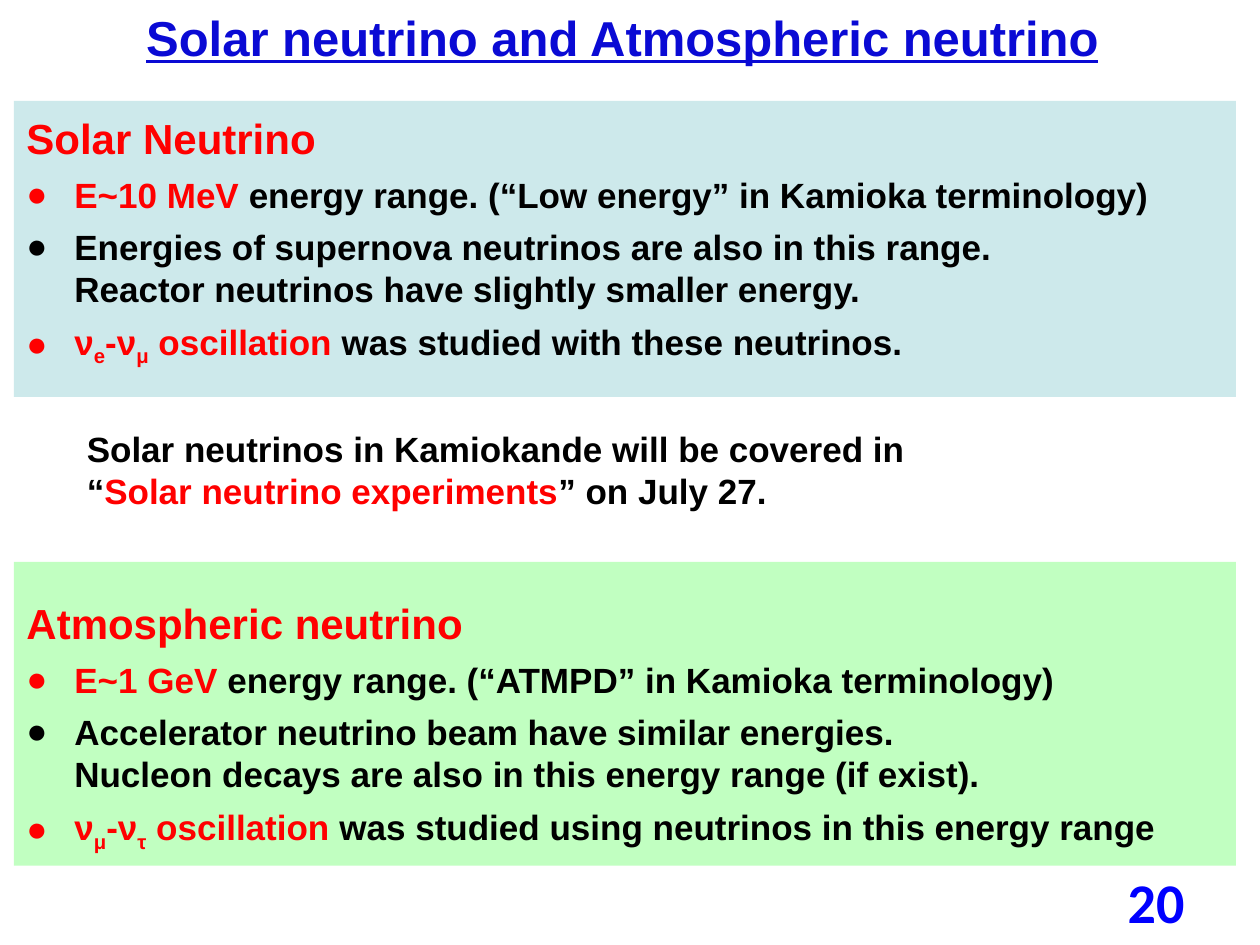
"""Build the slide comparing solar and atmospheric neutrinos."""
from copy import deepcopy

from lxml import etree
from pptx import Presentation
from pptx.dml.color import RGBColor
from pptx.enum.shapes import MSO_SHAPE
from pptx.enum.text import MSO_ANCHOR, MSO_AUTO_SIZE, PP_ALIGN
from pptx.oxml.ns import qn
from pptx.util import Inches, Pt

RECTANGLE = MSO_SHAPE.RECTANGLE
TOP, MIDDLE = MSO_ANCHOR.TOP, MSO_ANCHOR.MIDDLE
LEFT, CENTER, RIGHT = PP_ALIGN.LEFT, PP_ALIGN.CENTER, PP_ALIGN.RIGHT
NO_AUTOFIT = MSO_AUTO_SIZE.NONE

THEME = {
    "colors": {"title": "0A0AD4", "accent": "FF0000", "text": "000000",
               "number": "0000FF", "solar": "CDE9EB", "atmospheric": "C1FFC1"},
    "sizes": {"title": 28, "heading": 24, "body": 20, "number": 32},
    "fonts": {"main": "Arial", "number": "Calibri"},
}

TITLE = [("Solar neutrino and Atmospheric neutrino", "title")]
SECTIONS = [
    {"fill": "solar", "panel": (0.8, 2.35), "text_top": 0.84,
     "heading": "Solar Neutrino",
     "bullets": [
         [("E~10 MeV ", "accent"),
          ("energy range. (“Low energy” in Kamioka terminology)", "text")],
         [("Energies of supernova neutrinos are also in this range.\n"
           "Reactor neutrinos have slightly smaller energy.", "text")],
         [("ν", "accent"), ("e", "accent", "sub"), ("-ν", "accent"),
          ("μ", "accent", "sub"), (" oscillation ", "accent"),
          ("was studied with these neutrinos.", "text")]]},
    {"fill": "atmospheric", "panel": (4.46, 2.41), "text_top": 4.69,
     "heading": "Atmospheric neutrino",
     "bullets": [
         [("E~1 GeV ", "accent"),
          ("energy range. (“ATMPD” in Kamioka terminology)", "text")],
         [("Accelerator neutrino beam have similar energies.\n"
           "Nucleon decays are also in this energy range (if exist).", "text")],
         [("ν", "accent"), ("μ", "accent", "sub"), ("-ν", "accent"),
          ("τ", "accent", "sub"), (" oscillation ", "accent"),
          ("was studied using neutrinos in this energy range", "text")]]},
]
NOTICE = [("Solar neutrinos in Kamiokande will be covered in\n“", "text"),
          ("Solar neutrino experiments", "accent"), ("” on July 27.", "text")]
PAGE_NUMBER = [("20", "number")]

PANEL_LEFT, PANEL_WIDTH = 0.11, 9.7
BODY_WIDTH, BODY_HEIGHT = 9.81, 2.15
BULLET_INDENT = 0.38
PARAGRAPH_GAP = 6


def color(name):
    return RGBColor.from_string(THEME["colors"][name])


def set_format(target, values):
    for name, value in values.items():
        setattr(target, name, value)


def place(shape, left, top, width, height):
    box = {"left": left, "top": top, "width": width, "height": height}
    set_format(shape, {name: Inches(value) for name, value in box.items()})


def prepare_frame(shape, anchor=TOP):
    frame = shape.text_frame
    set_format(frame, {"word_wrap": True, "auto_size": NO_AUTOFIT,
                       "vertical_anchor": anchor})
    return frame


def set_bullet(paragraph, bulleted):
    properties = paragraph._p.get_or_add_pPr()
    indent = Inches(BULLET_INDENT) if bulleted else 0
    properties.set("marL", str(indent))
    properties.set("indent", str(-indent))
    if bulleted:
        etree.SubElement(properties, qn("a:buFont"), typeface=THEME["fonts"]["main"])
        etree.SubElement(properties, qn("a:buChar"), char="●")
    else:
        etree.SubElement(properties, qn("a:buNone"))


def write_runs(paragraph, runs, size, font="main", underline=False):
    for text, color_name, *marks in runs:
        for index, line in enumerate(text.split("\n")):
            if index:
                paragraph.add_line_break()
                line_break = paragraph._p[-1]
            run = paragraph.add_run()
            run.text = line
            set_format(run.font, {"name": THEME["fonts"][font], "bold": True,
                                  "size": Pt(THEME["sizes"][size]),
                                  "underline": underline})
            run.font.color.rgb = color(color_name)
            if marks:
                run.font._element.set("baseline", "-25000")
            if index:
                line_break.append(deepcopy(run.font._element))


def add_panel(slide, section):
    top, height = section["panel"]
    panel = slide.shapes.add_shape(
        RECTANGLE, *map(Inches, (PANEL_LEFT, top, PANEL_WIDTH, height)))
    panel.shadow.inherit = False
    panel.fill.solid()
    panel.fill.fore_color.rgb = color(section["fill"])
    panel.line.fill.background()
    slide.shapes.title.element.addprevious(panel.element)


def fill_section(body, section):
    place(body, PANEL_LEFT, section["text_top"], BODY_WIDTH, BODY_HEIGHT)
    frame = prepare_frame(body)
    rows = [([(section["heading"], "accent")], "heading")]
    rows += [(runs, "body") for runs in section["bullets"]]
    for index, (runs, size) in enumerate(rows):
        paragraph = frame.add_paragraph() if index else frame.paragraphs[0]
        set_bullet(paragraph, size == "body")
        set_format(paragraph, {"alignment": LEFT, "space_before": Pt(0),
                               "space_after": Pt(PARAGRAPH_GAP)})
        write_runs(paragraph, runs, size)


def add_text(slide, box, runs, size, alignment=LEFT, anchor=TOP, font="main"):
    shape = slide.shapes.add_textbox(*map(Inches, box))
    paragraph = prepare_frame(shape, anchor).paragraphs[0]
    paragraph.alignment = alignment
    write_runs(paragraph, runs, size, font)


def main():
    presentation = Presentation()
    set_format(presentation, {"slide_width": Inches(10), "slide_height": Inches(7.5)})
    slide = presentation.slides.add_slide(
        presentation.slide_layouts.get_by_name("Two Content"))
    title, *bodies = list(slide.placeholders)[:3]

    place(title, 0.57, 0.01, 8.74, 0.57)
    heading = prepare_frame(title).paragraphs[0]
    heading.alignment = CENTER
    write_runs(heading, TITLE, "title", underline=True)

    for body, section in zip(bodies, SECTIONS):
        add_panel(slide, section)
        fill_section(body, section)

    add_text(slide, (0.59, 3.34, 7.78, 0.77), NOTICE, "body")
    add_text(slide, (7.17, 6.95, 2.33, 0.4), PAGE_NUMBER, "number",
             RIGHT, MIDDLE, "number")
    presentation.save("out.pptx")


if __name__ == "__main__":
    main()
